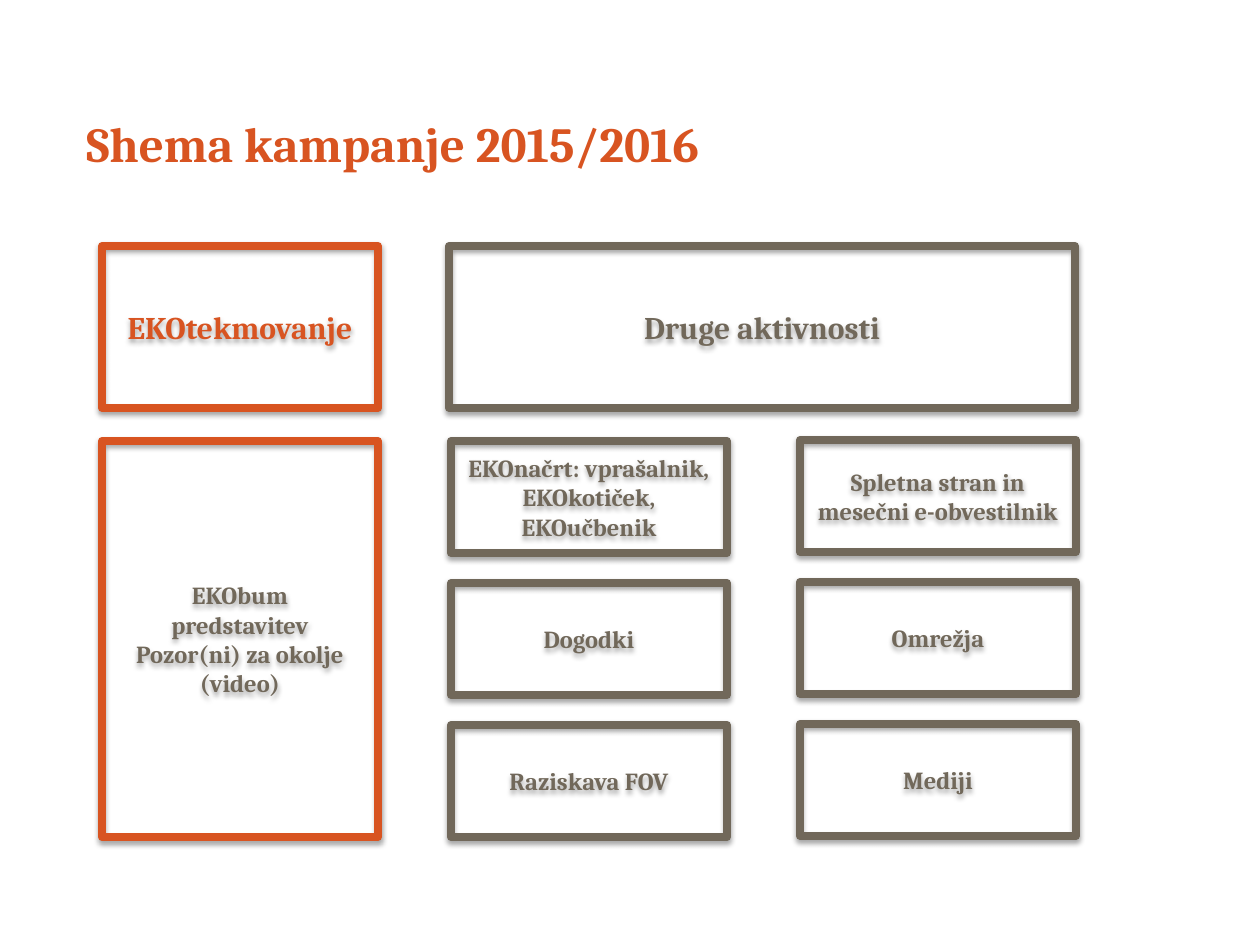
from lxml import etree
from pptx import Presentation
from pptx.dml.color import RGBColor
from pptx.enum.shapes import MSO_SHAPE as Shape
from pptx.enum.text import MSO_ANCHOR as Anchor, PP_ALIGN as Align
from pptx.oxml.ns import qn
from pptx.util import Emu, Pt

PX = 914400 / 126
COLORS = {"orange": "D85421", "brown": "71685A", "shadow": "000000"}
FONT = "Cambria"


def px(length):
    return Emu(round(length * PX))


def color(name):
    return RGBColor.from_string(COLORS[name])


class SchemePage:
    def __init__(self, deck):
        self.page = deck.slides.add_slide(deck.slide_layouts[6])

    def add_lines(self, box, lines, size, ink, align):
        frame = box.text_frame
        frame.word_wrap = True
        frame.vertical_anchor = Anchor.MIDDLE
        for index, line in enumerate(lines):
            para = frame.add_paragraph() if index else frame.paragraphs[0]
            para.alignment = align
            span = para.add_run()
            span.text = line
            span.font.name = FONT
            span.font.size = Pt(size)
            span.font.bold = True
            span.font.color.rgb = color(ink)
        return frame

    def add_title(self, area, text):
        box = self.page.shapes.add_textbox(*map(px, area))
        frame = self.add_lines(box, [text], 28, "orange", Align.LEFT)
        frame.paragraphs[0].line_spacing = 0.8

    def add_frame(self, area, lines, size=14, border="brown", ink="brown"):
        box = self.page.shapes.add_shape(Shape.RECTANGLE, *map(px, area))
        box.fill.background()
        box.line.color.rgb = color(border)
        box.line.width = Pt(4.5)
        self.drop_shadow(box)
        self.add_lines(box, lines, size, ink, Align.CENTER)

    def drop_shadow(self, box):
        box.shadow.inherit = False
        effects = box._element.spPr.find(qn("a:effectLst"))
        shadow = etree.SubElement(
            effects, qn("a:outerShdw"), blurRad=str(Pt(3.1)), dist=str(Pt(1.8)),
            dir="5400000", rotWithShape="0")
        tone = etree.SubElement(shadow, qn("a:srgbClr"), val=COLORS["shadow"])
        etree.SubElement(tone, qn("a:alpha"), val="35000")


def main():
    deck = Presentation()
    deck.slide_width, deck.slide_height = px(1260), px(945)
    scheme = SchemePage(deck)
    scheme.add_title((74, 76, 931, 145), "Shema kampanje 2015/2016")

    width, height, row_step = 276, 112, 142
    columns = [
        (800, 440, ["Spletna stran in mesečni e-obvestilnik", "Omrežja", "Mediji"]),
        (451, 441, ["EKOnačrt: vprašalnik, EKOkotiček, EKOučbenik", "Dogodki",
                    "Raziskava FOV"]),
    ]
    for left, top, activities in columns:
        for row, activity in enumerate(activities):
            scheme.add_frame((left, top + row * row_step, width, height), [activity])

    scheme.add_frame((102, 246, width, 162), ["EKOtekmovanje"], 18, "orange", "orange")
    scheme.add_frame((449, 246, 626, 162), ["Druge aktivnosti"], 18)
    scheme.add_frame((102, 441, width, 396),
                     ["EKObum", "predstavitev", "Pozor(ni) za okolje", "(video)"],
                     border="orange")
    deck.save("out.pptx")


if __name__ == "__main__":
    main()
